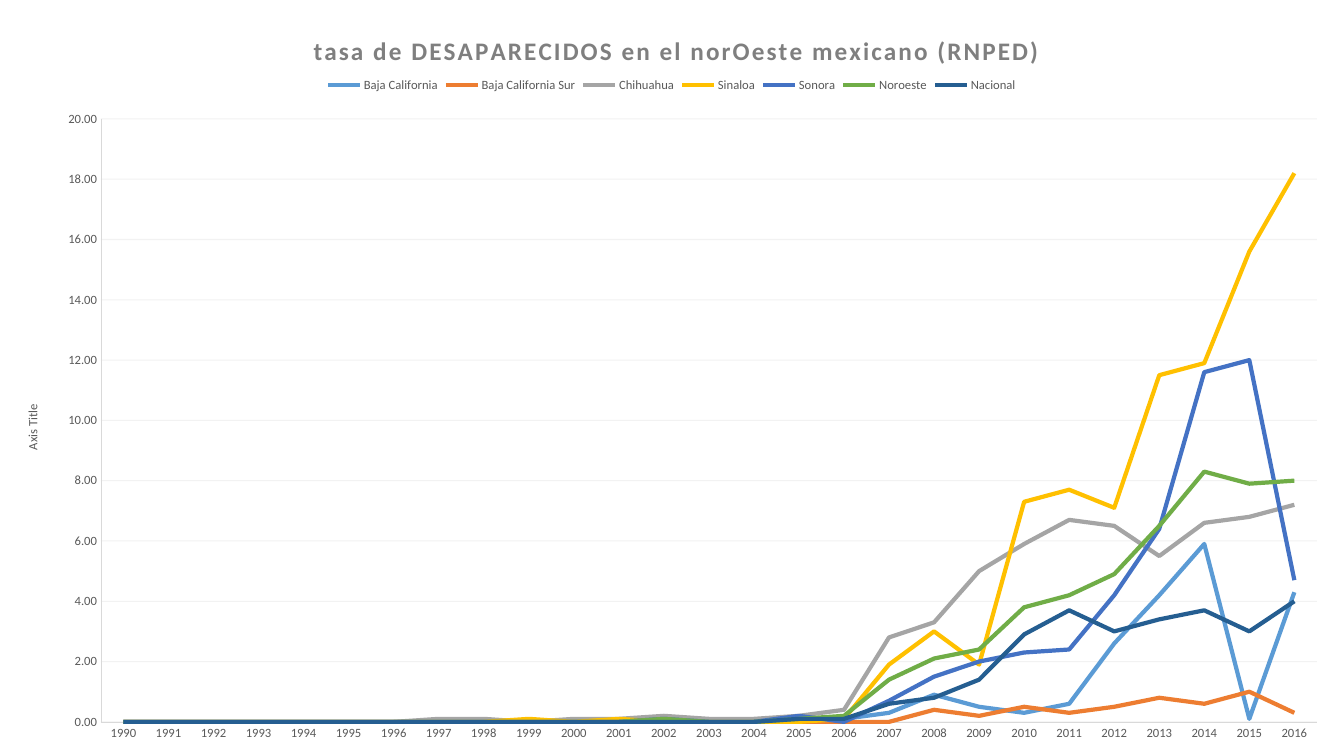
from dataclasses import dataclass

from lxml.etree import SubElement
from pptx import Presentation
from pptx.chart.data import CategoryChartData
from pptx.dml.color import RGBColor
from pptx.enum.chart import XL_CHART_TYPE, XL_LEGEND_POSITION, XL_TICK_MARK
from pptx.oxml.ns import qn
from pptx.util import Emu, Pt

SLIDE_W, SLIDE_H = 1344, 756
SCALE = 12192000 / SLIDE_W
FONT = "Calibri"
WHITE = RGBColor(0xFF, 0xFF, 0xFF)
TITLE_GREY = RGBColor(0x7F, 0x7F, 0x7F)
TEXT_GREY = RGBColor(0x59, 0x59, 0x59)
LINE_GREY = RGBColor(0xD9, 0xD9, 0xD9)
BLUE = RGBColor(0x5B, 0x9B, 0xD5)
ORANGE = RGBColor(0xED, 0x7D, 0x31)
GREY = RGBColor(0xA5, 0xA5, 0xA5)
GOLD = RGBColor(0xFF, 0xC0, 0x00)
INDIGO = RGBColor(0x44, 0x72, 0xC4)
GREEN = RGBColor(0x70, 0xAD, 0x47)
NAVY = RGBColor(0x25, 0x5E, 0x91)
FIRST_YEAR, LAST_YEAR = 1990, 2016


@dataclass(frozen=True)
class Rate:
    """A region's yearly rates, ending in the last year and zero before start."""

    name: str
    color: RGBColor
    recent: tuple[float, ...]

    def values(self) -> list[float]:
        years = LAST_YEAR - FIRST_YEAR + 1
        return [0.0] * (years - len(self.recent)) + list(self.recent)


RATES = (
    Rate("Baja California", BLUE,
         (0.1, 0.1, 0.3, 0.9, 0.5, 0.3, 0.6, 2.6, 4.2, 5.9, 0.1, 4.3)),
    Rate("Baja California Sur", ORANGE,
         (0.4, 0.2, 0.5, 0.3, 0.5, 0.8, 0.6, 1, 0.3)),
    Rate("Chihuahua", GREY,
         (0.1, 0.1, 0, 0.1, 0.1, 0.2, 0.1, 0.1, 0.2, 0.4,
          2.8, 3.3, 5, 5.9, 6.7, 6.5, 5.5, 6.6, 6.8, 7.2)),
    Rate("Sinaloa", GOLD,
         (0.1, 0, 0.1, 0, 0, 0, 0, 0.1,
          1.9, 3, 1.9, 7.3, 7.7, 7.1, 11.5, 11.9, 15.6, 18.2)),
    Rate("Sonora", INDIGO,
         (0.1, 0, 0, 0.2, 0, 0.7, 1.5, 2, 2.3, 2.4, 4.2, 6.4, 11.6, 12, 4.7)),
    Rate("Noroeste", GREEN,
         (0.1, 0, 0, 0.1, 0.2, 1.4, 2.1, 2.4, 3.8, 4.2, 4.9, 6.5, 8.3, 7.9, 8)),
    Rate("Nacional", NAVY,
         (0.1, 0.1, 0.6, 0.8, 1.4, 2.9, 3.7, 3, 3.4, 3.7, 3, 4)),
)


def px(n: int) -> Emu:
    """Turn pixels into EMU."""
    return Emu(round(n * SCALE))


def set_font(font, size: int, color: RGBColor, bold: bool = False) -> None:
    """Style a chart font."""
    font.name, font.size, font.bold = FONT, Pt(size), bold
    font.color.rgb = color


def set_line(line, color: RGBColor, width: float) -> None:
    """Style a solid line."""
    line.color.rgb = color
    line.width = Pt(width)


def place(part, index: int, x: int, y: int, w: int = 0, h: int = 0) -> None:
    """Give a chart part a manual position and, if sized, an inner extent."""
    for old in part.findall(qn("c:layout")):
        part.remove(old)
    layout = part.makeelement(qn("c:layout"))
    part.insert(index, layout)
    manual = SubElement(layout, qn("c:manualLayout"))
    settings = [("xMode", "edge"), ("yMode", "edge"),
                ("x", x / SLIDE_W), ("y", y / SLIDE_H)]
    if w:
        settings.insert(0, ("layoutTarget", "inner"))
        settings += [("w", w / SLIDE_W), ("h", h / SLIDE_H)]
    for tag, value in settings:
        SubElement(manual, qn(f"c:{tag}")).set("val", str(value))


def add_title(owner, title, text: str, size: int, color: RGBColor, bold: bool):
    """Write a chart or axis title and return its run."""
    owner.has_title = True
    r = title.text_frame.paragraphs[0].add_run()
    r.text = text
    set_font(r.font, size, color, bold)
    return r


def style_axis(axis) -> None:
    """Style the line, ticks and labels of an axis."""
    axis.major_tick_mark = axis.minor_tick_mark = XL_TICK_MARK.NONE
    set_font(axis.tick_labels.font, 9, TEXT_GREY)
    set_line(axis.format.line, LINE_GREY, 0.25)


def style_value_axis(axis) -> None:
    """Set the scale, number format, gridlines and title of the value axis."""
    style_axis(axis)
    axis.minimum_scale, axis.maximum_scale, axis.major_unit = 0, 20, 2
    axis.tick_labels.number_format = "0.00"
    axis.tick_labels.number_format_is_linked = False
    axis.has_major_gridlines = True
    grid = axis.major_gridlines
    set_line(grid.format.line, LINE_GREY, 0.75)
    gridlines = axis._element.find(qn("c:majorGridlines"))
    color = next(gridlines.iter(qn("a:srgbClr")))
    SubElement(color, qn("a:alpha")).set("val", "32000")
    add_title(axis, axis.axis_title, "Axis Title", 9, TEXT_GREY, False)
    title = axis._element.find(qn("c:title"))
    body = next(title.iter(qn("a:bodyPr")))
    body.set("rot", "-5400000")
    body.set("vert", "horz")
    place(title, 1, 22, 402)


def add_rate_chart(s) -> None:
    """Add the line chart that fills the slide."""
    data = CategoryChartData(number_format="0.00")
    data.categories = [str(y) for y in range(FIRST_YEAR, LAST_YEAR + 1)]
    for rate in RATES:
        data.add_series(rate.name, rate.values())
    chart = s.shapes.add_chart(XL_CHART_TYPE.LINE, px(0), px(0),
                               px(SLIDE_W), px(SLIDE_H), data).chart
    set_font(chart.font, 10, TEXT_GREY)

    r = add_title(chart, chart.chart_title,
                  "tasa de DESAPARECIDOS en el norOeste mexicano (RNPED)",
                  18, TITLE_GREY, True)
    r.font._element.set("spc", "150")
    root = chart._chartSpace.find(qn("c:chart"))
    place(root.find(qn("c:title")), 1, 309, 29)

    chart.has_legend = True
    chart.legend.position = XL_LEGEND_POSITION.TOP
    chart.legend.include_in_layout = False
    set_font(chart.legend.font, 9, TEXT_GREY)
    place(root.find(qn("c:legend")), 1, 324, 74)

    style_axis(chart.category_axis)
    style_value_axis(chart.value_axis)
    place(root.find(qn("c:plotArea")), 0, 101, 119, 1216, 603)

    plot = chart.plots[0]
    plot.vary_by_categories = False
    for series, rate in zip(plot.series, RATES):
        series.smooth = False
        set_line(series.format.line, rate.color, 3)


def main() -> None:
    """Build and save the slide."""
    prs = Presentation()
    prs.slide_width, prs.slide_height = px(SLIDE_W), px(SLIDE_H)
    s = prs.slides.add_slide(prs.slide_layouts[6])
    s.background.fill.solid()
    s.background.fill.fore_color.rgb = WHITE
    add_rate_chart(s)
    prs.save("out.pptx")


if __name__ == "__main__":
    main()
